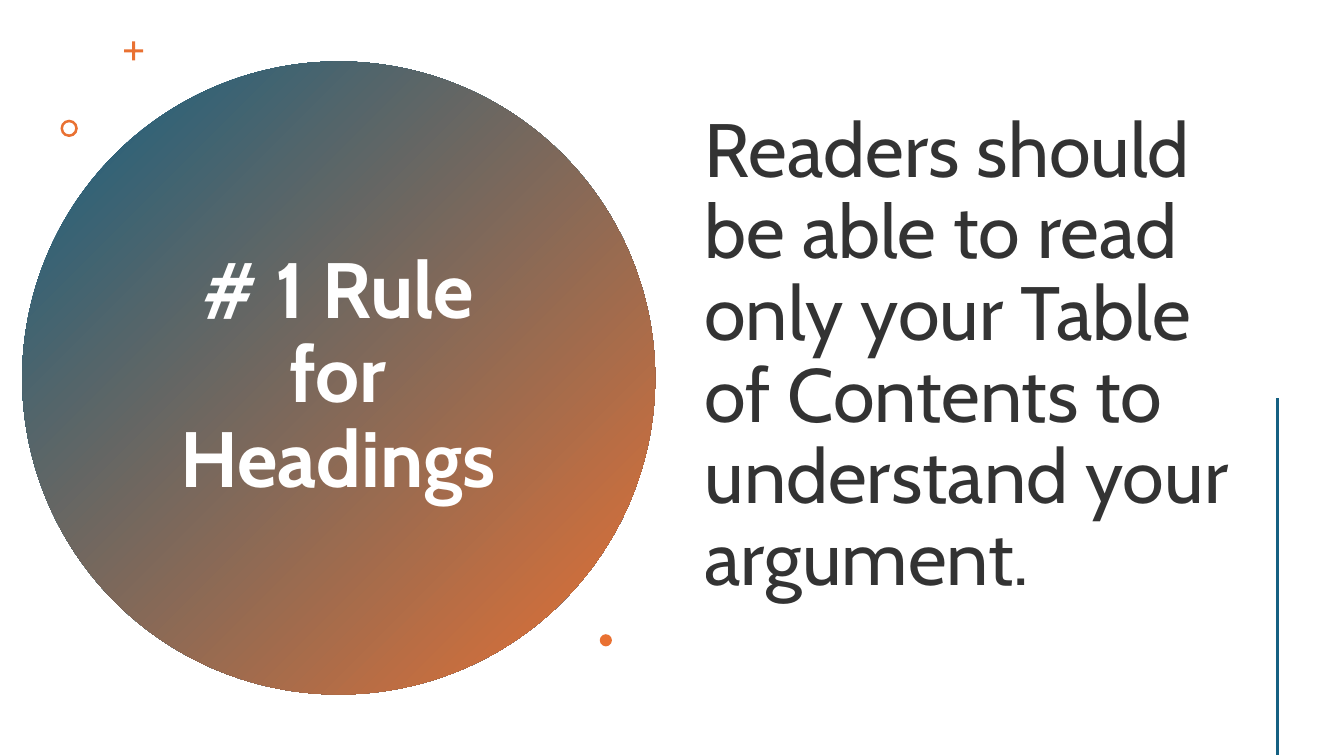
"""Build the slide on the first rule for headings."""
from lxml.etree import SubElement
from pptx import Presentation
from pptx.dml.color import RGBColor
from pptx.enum.shapes import MSO_CONNECTOR, MSO_SHAPE
from pptx.enum.text import MSO_ANCHOR, PP_ALIGN
from pptx.oxml.ns import qn
from pptx.util import Pt

COLORS = {"blue": "156082", "orange": "E97132", "white": "FFFFFF", "black": "000000"}
FONT = "Cabin"
SLIDE_SIZE = (960, 540)
CIRCLE = (15.84, 43.92, 452.16, 452.16)
ACCENTS = [
    (MSO_SHAPE.CROSS, (88.6, 29.5, 13.7, 13.7), 0.42),
    (MSO_SHAPE.DONUT, (43.2, 85.5, 12.4, 12.4), 0.15),
    (MSO_SHAPE.OVAL, (428.4, 453, 8.7, 8.7), None),
]
RULE_LINE = (912.24, 284.4, 912.24, 539.5)
TEXTS = [
    {"text": "# 1 Rule for Headings", "box": (97.92, 101.52, 287.28, 336.24),
     "color": "white", "opacity": 100,
     "font": {"size": Pt(56), "bold": True},
     "paragraph": {"alignment": PP_ALIGN.CENTER}},
    {"text": "Readers should be able to read only your Table of Contents "
             "to understand your argument.",
     "box": (496.08, 41.04, 390.96, 427.5),
     "color": "black", "opacity": 80,
     "font": {"size": Pt(54), "bold": False},
     "paragraph": {"alignment": PP_ALIGN.LEFT, "space_before": Pt(10)}},
]


def rgb(name):
    return RGBColor.from_string(COLORS[name])


def points(values):
    return [Pt(value) for value in values]


def apply(target, values):
    for attribute, value in values.items():
        setattr(target, attribute, value)


def add_figure(slide, preset, box):
    figure = slide.shapes.add_shape(preset, *points(box))
    figure.shadow.inherit = False
    figure.line.fill.background()
    return figure


def add_circle(slide):
    fill = add_figure(slide, MSO_SHAPE.OVAL, CIRCLE).fill
    fill.gradient()
    fill.gradient_angle = 315
    for stop, color, position in zip(fill.gradient_stops, ("blue", "orange"), (0, 1)):
        stop.color.rgb = rgb(color)
        stop.position = position


def add_accent(slide, preset, box, thickness):
    accent = add_figure(slide, preset, box)
    accent.fill.solid()
    accent.fill.fore_color.rgb = rgb("orange")
    if thickness is not None:
        accent.adjustments[0] = thickness


def add_text(slide, content):
    frame = slide.shapes.add_textbox(*points(content["box"])).text_frame
    apply(frame, {"word_wrap": True, "vertical_anchor": MSO_ANCHOR.MIDDLE})
    paragraph = frame.paragraphs[0]
    apply(paragraph, {"line_spacing": 0.9, **content["paragraph"]})
    run = paragraph.add_run()
    run.text = content["text"]
    apply(run.font, {"name": FONT, **content["font"]})
    run.font.color.rgb = rgb(content["color"])
    if content["opacity"] < 100:
        color = run.font._element.find(".//" + qn("a:srgbClr"))
        SubElement(color, qn("a:alpha"), val=str(content["opacity"] * 1000))


def add_rule_line(slide):
    rule = slide.shapes.add_connector(MSO_CONNECTOR.STRAIGHT, *points(RULE_LINE))
    rule.line.width = Pt(2)
    rule.line.color.rgb = rgb("blue")
    SubElement(rule._element.spPr, qn("a:effectLst"))


def main():
    deck = Presentation()
    deck.slide_width, deck.slide_height = points(SLIDE_SIZE)
    slide = deck.slides.add_slide(deck.slide_layouts[6])
    add_circle(slide)
    for accent in ACCENTS:
        add_accent(slide, *accent)
    for content in TEXTS:
        add_text(slide, content)
    add_rule_line(slide)
    deck.save("out.pptx")


if __name__ == "__main__":
    main()
